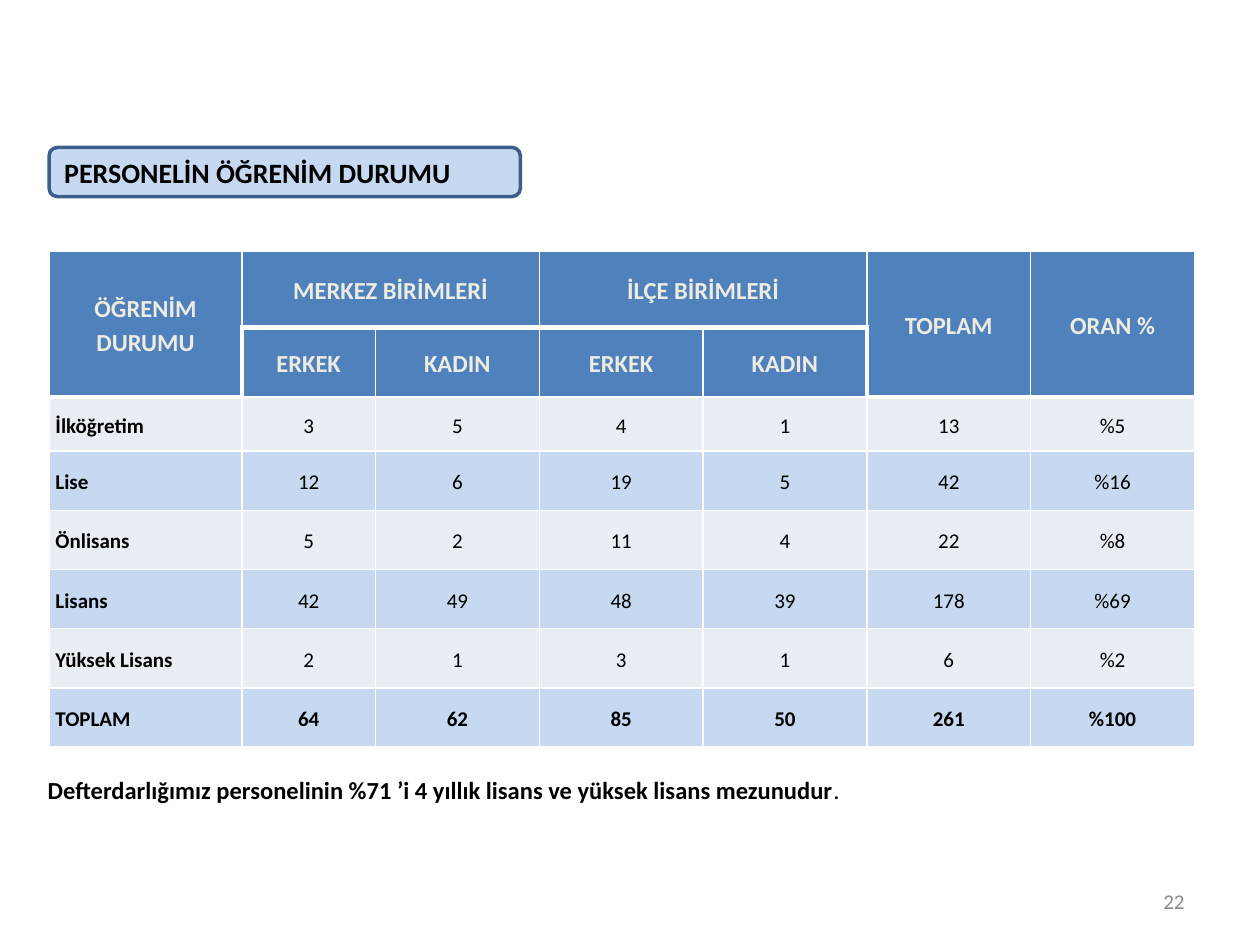
from lxml.etree import SubElement
from pptx import Presentation
from pptx.dml.color import RGBColor
from pptx.enum.shapes import MSO_SHAPE
from pptx.enum.text import MSO_ANCHOR, MSO_AUTO_SIZE, PP_ALIGN
from pptx.oxml.ns import qn
from pptx.util import Inches, Pt

COLORS = {
    "plate": "C6D9F1",
    "outline": "3A5F8C",
    "header": "4F81BD",
    "header_text": "EEECE1",
    "light_row": "E9EDF4",
    "dark_row": "C6D9F1",
    "border": "FFFFFF",
    "text": "000000",
    "number": "898989",
}
COLUMN_WIDTHS = [1.53, 1.06] + [1.3] * 5
ROW_HEIGHTS = [0.61, 0.55, 0.43] + [0.47] * 5
HEADER_ROWS = 2
ROWS = [
    ["ÖĞRENİM DURUMU", "MERKEZ BİRİMLERİ", "", "İLÇE BİRİMLERİ", "", "TOPLAM", "ORAN %"],
    ["", "ERKEK", "KADIN", "ERKEK", "KADIN", "", ""],
    ["İlköğretim", "3", "5", "4", "1", "13", "%5"],
    ["Lise", "12", "6", "19", "5", "42", "%16"],
    ["Önlisans", "5", "2", "11", "4", "22", "%8"],
    ["Lisans", "42", "49", "48", "39", "178", "%69"],
    ["Yüksek Lisans", "2", "1", "3", "1", "6", "%2"],
    ["TOPLAM", "64", "62", "85", "50", "261", "%100"],
]
TALL_COLUMNS = (0, 5, 6)
MERGES = [(0, column, 1, column) for column in TALL_COLUMNS] + [(0, 1, 0, 2), (0, 3, 0, 4)]


def color(name):
    return RGBColor.from_string(COLORS[name])


def add_span(para, text, size, color_name="text", bold=False):
    span = para.add_run()
    span.text = text
    span.font.name = "Calibri"
    span.font.size = Pt(size)
    span.font.bold = bold
    span.font.color.rgb = color(color_name)


def place(shape, left, top, width, height):
    shape.left, shape.top = Inches(left), Inches(top)
    shape.width, shape.height = Inches(width), Inches(height)


def add_title(page, text):
    title = page.shapes.title
    plate = page.shapes.add_shape(
        MSO_SHAPE.ROUNDED_RECTANGLE, Inches(0.39), Inches(1.17), Inches(3.74), Inches(0.39)
    )
    plate.shadow.inherit = False
    plate.fill.solid()
    plate.fill.fore_color.rgb = color("plate")
    plate.line.color.rgb = color("outline")
    plate.line.width = Pt(2)
    title._element.addprevious(plate._element)

    place(title, 0.41, 1.17, 3.7, 0.39)
    frame = title.text_frame
    frame.auto_size = MSO_AUTO_SIZE.NONE
    frame.vertical_anchor = MSO_ANCHOR.MIDDLE
    para = frame.paragraphs[0]
    para.alignment = PP_ALIGN.LEFT
    add_span(para, text, 16, bold=True)


def add_text(page, left, top, width, height, spans, alignment=PP_ALIGN.LEFT, anchor=MSO_ANCHOR.TOP):
    box = page.shapes.add_textbox(Inches(left), Inches(top), Inches(width), Inches(height))
    frame = box.text_frame
    frame.word_wrap = True
    frame.vertical_anchor = anchor
    para = frame.paragraphs[0]
    para.alignment = alignment
    for text, size, color_name, bold in spans:
        add_span(para, text, size, color_name, bold)


def border_widths(row, column):
    tall = column in TALL_COLUMNS
    return {
        "L": 3 if (row, column) == (1, 1) else 1,
        "R": 3 if (row, column) == (1, 4) else 1,
        "T": 3 if row == 1 or (row == HEADER_ROWS and tall) else 1,
        "B": 3 if row == 0 or (row == 1 and tall) else 1,
    }


def set_borders(cell, widths):
    properties = cell._tc.get_or_add_tcPr()
    for side, width in widths.items():
        line = SubElement(properties, qn(f"a:ln{side}"), w=str(Pt(width)))
        fill = SubElement(line, qn("a:solidFill"))
        SubElement(fill, qn("a:srgbClr"), val=COLORS["border"])


def format_cell(cell, text, row, column):
    header = row < HEADER_ROWS
    set_borders(cell, border_widths(row, column))
    cell.fill.solid()
    cell.fill.fore_color.rgb = color("header" if header else ("light_row", "dark_row")[row % 2])
    cell.vertical_anchor = MSO_ANCHOR.MIDDLE
    cell.margin_left = cell.margin_right = Inches(0.05)
    cell.margin_top = cell.margin_bottom = 0
    para = cell.text_frame.paragraphs[0]
    para.line_spacing = 1.15
    para.alignment = PP_ALIGN.CENTER if header or column else PP_ALIGN.LEFT
    if text:
        bold = header or column == 0 or row == len(ROWS) - 1
        add_span(para, text, 14 if header else 12, "header_text" if header else "text", bold)


def add_education_table(page):
    table = page.shapes.add_table(
        len(ROWS), len(COLUMN_WIDTHS), Inches(0.39), Inches(1.99),
        Inches(sum(COLUMN_WIDTHS)), Inches(sum(ROW_HEIGHTS)),
    ).table
    for column, width in zip(table.columns, COLUMN_WIDTHS):
        column.width = Inches(width)
    for row, height in zip(table.rows, ROW_HEIGHTS):
        row.height = Inches(height)
    for top, left, bottom, right in MERGES:
        table.cell(top, left).merge(table.cell(bottom, right))
    for row, texts in enumerate(ROWS):
        for column, text in enumerate(texts):
            format_cell(table.cell(row, column), text, row, column)


def main():
    deck = Presentation()
    deck.slide_width, deck.slide_height = Inches(10), Inches(7.5)
    page = deck.slides.add_slide(deck.slide_layouts.get_by_name("Title Only"))
    add_title(page, "PERSONELİN ÖĞRENİM DURUMU")
    add_education_table(page)
    summary = "Defterdarlığımız personelinin %71 ’i 4 yıllık lisans ve yüksek lisans mezunudur"
    add_text(page, 0.28, 6.1, 8.91, 0.34, [(summary, 14, "text", True), (".", 14, "text", False)])
    add_text(page, 7.17, 6.95, 2.33, 0.4, [("22", 12, "number", False)],
             PP_ALIGN.RIGHT, MSO_ANCHOR.MIDDLE)
    deck.save("out.pptx")


if __name__ == "__main__":
    main()
